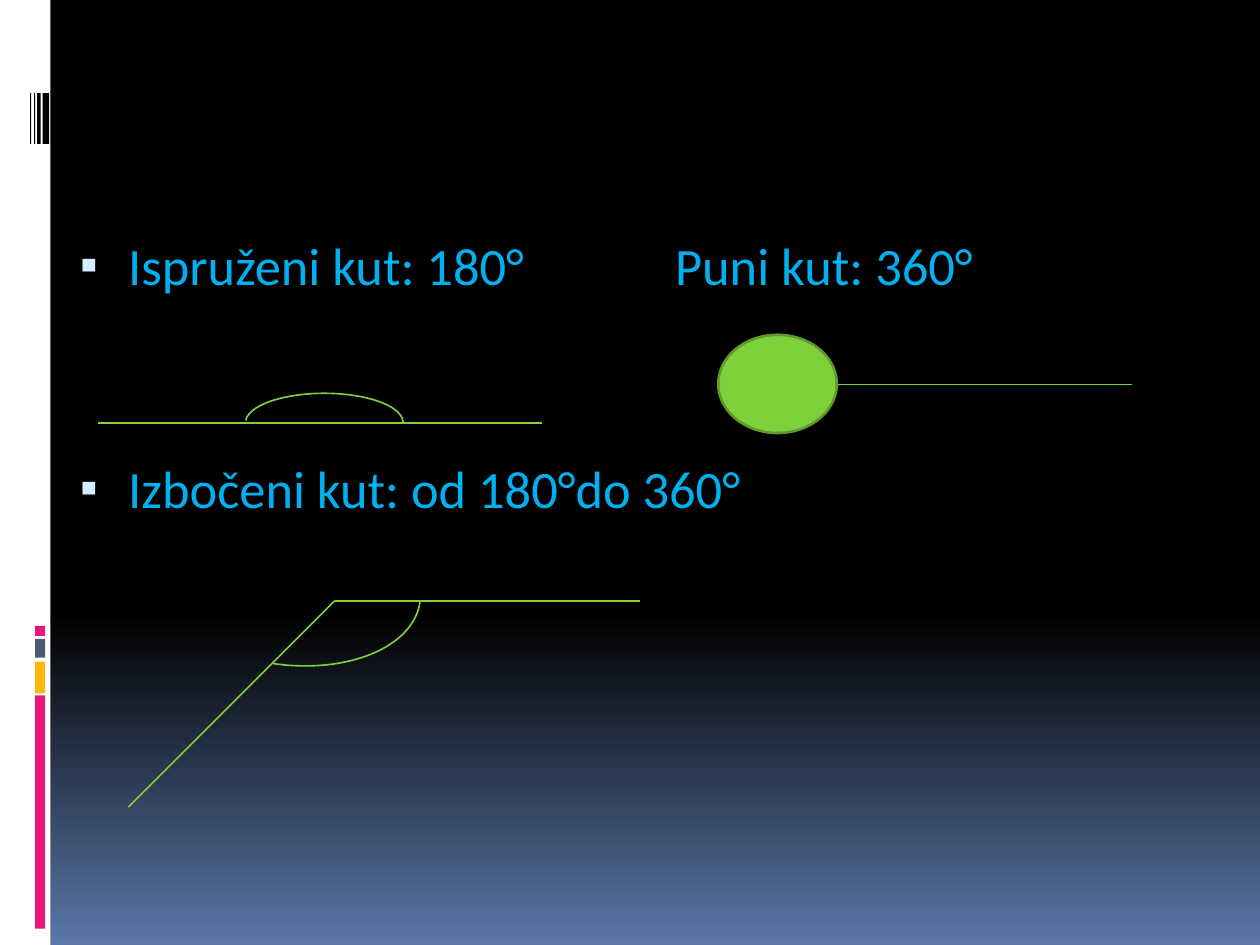
from dataclasses import dataclass

from lxml import etree
from pptx import Presentation
from pptx.dml.color import RGBColor
from pptx.enum.shapes import MSO_CONNECTOR, MSO_SHAPE
from pptx.enum.text import MSO_ANCHOR, MSO_AUTO_SIZE, PP_ALIGN
from pptx.oxml.ns import qn
from pptx.util import Cm, Pt

RECTANGLE, OVAL, ARC = MSO_SHAPE.RECTANGLE, MSO_SHAPE.OVAL, MSO_SHAPE.ARC
STRAIGHT = MSO_CONNECTOR.STRAIGHT
LEFT, TOP, NO_AUTOFIT = PP_ALIGN.LEFT, MSO_ANCHOR.TOP, MSO_AUTO_SIZE.NONE


@dataclass(frozen=True)
class Theme:
    font: str = "Calibri"
    text_size: float = 30
    line_width: float = 0.94
    outline_width: float = 1.5
    text: str = "00B0F0"
    bullet: str = "D6ECFF"
    green: str = "7FD13B"
    dark_green: str = "5E9B2C"
    white: str = "FFFFFF"
    black: str = "000000"
    blue: str = "5B77A8"
    pink: str = "EA157A"
    yellow: str = "FEB80A"
    slate: str = "4E5B6F"


THEME = Theme()


def rgb(color):
    return RGBColor.from_string(color)


def set_background(slide):
    """Black down to 65 % of the height, then fading to blue."""
    fill = slide.background.fill
    fill.gradient()
    fill.gradient_angle = 270
    stops = ((0.65, THEME.black), (1, THEME.blue))
    for stop, (position, color) in zip(fill.gradient_stops, stops):
        stop.position = position
        stop.color.rgb = rgb(color)


def add_shape(slide, kind, box, fill=None, line=None, width=THEME.line_width):
    shape = slide.shapes.add_shape(kind, *map(Cm, box))
    shape.shadow.inherit = False
    if fill:
        shape.fill.solid()
        shape.fill.fore_color.rgb = rgb(fill)
    else:
        shape.fill.background()
    if line:
        shape.line.color.rgb = rgb(line)
        shape.line.width = Pt(width)
    else:
        shape.line.fill.background()
    return shape


def add_ray(slide, start, end):
    ray = slide.shapes.add_connector(STRAIGHT, *map(Cm, (*start, *end)))
    ray.line.color.rgb = rgb(THEME.green)
    ray.line.width = Pt(THEME.line_width)
    etree.SubElement(ray._element.spPr, qn("a:effectLst"))


def add_arc(slide, box, rotation=0, start_angle=270):
    arc = add_shape(slide, ARC, box, line=THEME.green)
    arc.rotation = rotation
    # Adjustments count 100000 units, angles 60000 units to the degree.
    arc.adjustments[0] = start_angle * 0.6


def write_text(paragraph, text, size=THEME.text_size, color=THEME.text,
               space_before=0):
    paragraph.alignment = LEFT
    paragraph.line_spacing = 1.0
    paragraph.space_before = Pt(space_before)
    run = paragraph.add_run()
    run.text = text
    run.font.name = THEME.font
    run.font.size = Pt(size)
    run.font.color.rgb = rgb(color)


def set_bullet(paragraph):
    properties = paragraph._p.get_or_add_pPr()
    properties.set("marL", str(Cm(1.14)))
    properties.set("indent", str(Cm(-0.97)))
    color = etree.SubElement(properties, qn("a:buClr"))
    etree.SubElement(color, qn("a:srgbClr"), val=THEME.bullet)
    etree.SubElement(properties, qn("a:buSzPct"), val="95000")
    etree.SubElement(properties, qn("a:buFont"), typeface=THEME.font)
    etree.SubElement(properties, qn("a:buChar"), char="▪")


def prepare_frame(shape):
    frame = shape.text_frame
    frame.word_wrap = True
    frame.auto_size = NO_AUTOFIT
    frame.vertical_anchor = TOP
    return frame


def add_side_strip(slide):
    add_shape(slide, RECTANGLE, (0, 0, 1.02, 19.05), THEME.white)
    color_bars = ((14.02, 4.7, THEME.pink), (13.34, 0.64, THEME.yellow),
                  (12.88, 0.38, THEME.slate), (12.62, 0.2, THEME.pink))
    for top, height, color in color_bars:
        add_shape(slide, RECTANGLE, (0.71, top, 0.2, height), color)
    for left, width in ((0.86, 0.13), (0.75, 0.07), (0.69, 0.02), (0.61, 0.02)):
        add_shape(slide, RECTANGLE, (left, 1.88, width, 1.02), THEME.black)


def add_angle_names(slide):
    slide.shapes.title._element.getparent().remove(slide.shapes.title._element)
    body = slide.placeholders[1]
    body.left, body.top, body.width, body.height = map(
        Cm, (1.19, 4.57, 22.86, 12.57))
    frame = prepare_frame(body)
    write_text(frame.paragraphs[0], "Ispruženi kut: 180°")
    write_text(frame.add_paragraph(), "Izbočeni kut: od 180°do 360°",
               space_before=91.5)
    for paragraph in frame.paragraphs:
        set_bullet(paragraph)

    full_angle = slide.shapes.add_textbox(*map(Cm, (13.36, 4.57, 8, 1.6)))
    write_text(prepare_frame(full_angle).paragraphs[0], "Puni kut: 360°")


def draw_straight_angle(slide):
    add_ray(slide, (1.98, 8.53), (10.92, 8.53))
    add_arc(slide, (4.95, 7.93, 3.18, 1.19), start_angle=181.7)


def draw_full_angle(slide):
    add_ray(slide, (15.29, 7.75), (22.81, 7.75))
    add_shape(slide, OVAL, (14.48, 6.75, 2.39, 1.98), THEME.green,
              line=THEME.dark_green, width=THEME.outline_width)


def draw_reflex_angle(slide):
    vertex = (6.75, 12.11)
    for end in ((12.9, 12.11), (2.59, 16.27)):
        add_ray(slide, vertex, end)
    add_arc(slide, (4.09, 8.99, 3.3, 5.51), rotation=98.3)


def main():
    presentation = Presentation()
    presentation.slide_width, presentation.slide_height = Cm(25.4), Cm(19.05)
    slide = presentation.slides.add_slide(presentation.slide_layouts[1])
    set_background(slide)
    add_side_strip(slide)
    add_angle_names(slide)
    draw_straight_angle(slide)
    draw_full_angle(slide)
    draw_reflex_angle(slide)
    presentation.save("out.pptx")


if __name__ == "__main__":
    main()
